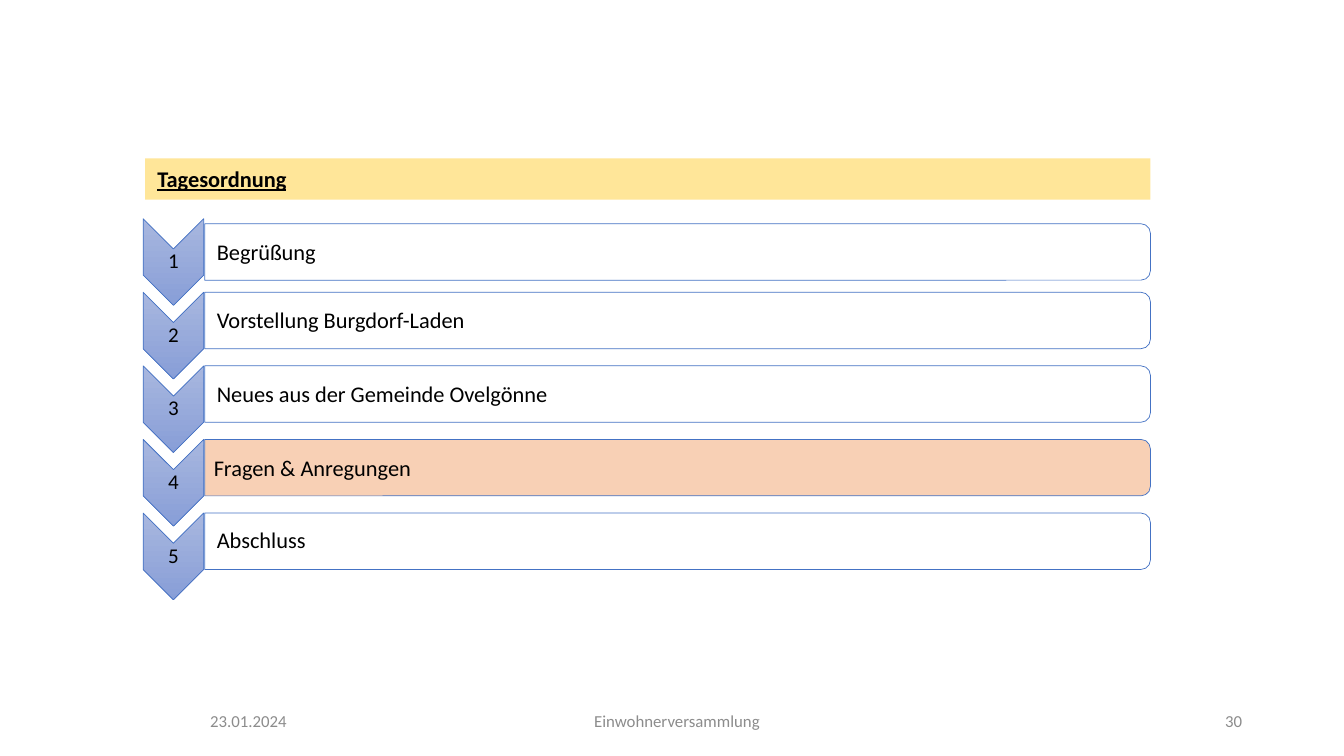
import pptx
import pptx.dml.color
import pptx.enum.shapes
import pptx.enum.text
import pptx.oxml
import pptx.oxml.ns
import pptx.util
from pptx.util import Inches

RGBColor = pptx.dml.color.RGBColor
SHAPES = pptx.enum.shapes.MSO_SHAPE
ALIGN = pptx.enum.text.PP_ALIGN

BLACK = RGBColor(0x00, 0x00, 0x00)
WHITE = RGBColor(0xFF, 0xFF, 0xFF)
GREY = RGBColor(0x8C, 0x8C, 0x8C)
BLUE = RGBColor(0x44, 0x72, 0xC4)
LIGHT_BLUE = RGBColor(0xA8, 0xB7, 0xDF)
MID_BLUE = RGBColor(0x88, 0x9E, 0xD7)
YELLOW = RGBColor(0xFF, 0xE6, 0x99)
PEACH = RGBColor(0xF8, 0xCB, 0xAD)

# Wording, bar colour, text indent, line spacing
AGENDA = [
    ("Begrüßung", WHITE, 0.12, 1.0),
    ("Vorstellung Burgdorf-Laden", WHITE, 0.12, 1.0),
    ("Neues aus der Gemeinde Ovelgönne", WHITE, 0.12, 1.0),
    ("Fragen & Anregungen", PEACH, 0.09, 1.0),
    ("Abschluss", WHITE, 0.12, 0.9),
]
ROW_PITCH = 0.73
CHEVRON_LENGTH, CHEVRON_WIDTH = 0.86, 0.6
BAR_HEIGHT = 0.56


def write_text(holder, text, size=16, color=BLACK, align=ALIGN.LEFT, indent=0.01,
               spacing=1.0, bold=False, underline=False):
    frame = holder.text_frame
    frame.word_wrap = True
    frame.auto_size = pptx.enum.text.MSO_AUTO_SIZE.NONE
    frame.vertical_anchor = pptx.enum.text.MSO_ANCHOR.MIDDLE
    frame.margin_left = Inches(indent)
    frame.margin_right = frame.margin_top = frame.margin_bottom = Inches(0.01)
    paragraph = frame.paragraphs[0]
    paragraph.alignment = align
    paragraph.line_spacing = spacing
    run = paragraph.add_run()
    run.text = text
    run.font.name = "Calibri"
    run.font.size = pptx.util.Pt(size)
    run.font.color.rgb = color
    run.font.bold = bold
    run.font.underline = underline


def add_label(slide, left, top, width, height, text, **text_format):
    label = slide.shapes.add_textbox(*map(Inches, (left, top, width, height)))
    write_text(label, text, **text_format)


def add_turned_shape(slide, kind, left, top, width, height):
    """Add a shape turned by 90 degrees that fills the given visible box."""
    shape = slide.shapes.add_shape(
        kind, Inches(left + (width - height) / 2), Inches(top + (height - width) / 2),
        Inches(height), Inches(width))
    shape.rotation = 90
    shape.shadow.inherit = False
    shape.line.color.rgb = BLUE
    shape.line.width = pptx.util.Pt(0.5)
    return shape


def add_chevron(slide, left, top, number):
    chevron = add_turned_shape(slide, SHAPES.CHEVRON, left, top,
                               CHEVRON_WIDTH, CHEVRON_LENGTH)
    chevron.fill.gradient()
    chevron.fill.gradient_angle = 270
    for stop, color in zip(chevron.fill.gradient_stops, (LIGHT_BLUE, MID_BLUE)):
        stop.color.rgb = color
    # Keep the shading vertical although the shape is turned
    gradient = chevron.element.spPr.find(pptx.oxml.ns.qn("a:gradFill"))
    gradient.set("rotWithShape", "0")
    add_label(slide, left, top + 0.3, CHEVRON_WIDTH, 0.26, str(number),
              size=15, align=ALIGN.CENTER, spacing=0.9)


def add_bar(slide, left, top, width, text, color, indent, spacing):
    bar = add_turned_shape(slide, SHAPES.ROUND_2_SAME_RECTANGLE, left, top,
                           width, BAR_HEIGHT)
    bar.fill.solid()
    bar.fill.fore_color.rgb = color
    fill_color = bar.element.spPr.find(
        pptx.oxml.ns.qn("a:solidFill")).find(pptx.oxml.ns.qn("a:srgbClr"))
    alpha = pptx.oxml.parse_xml(
        f'<a:alpha {pptx.oxml.ns.nsdecls("a")} val="90000"/>')
    fill_color.append(alpha)
    add_label(slide, left, top + 0.02, width - 0.03, 0.51, text,
              indent=indent, spacing=spacing)


def add_agenda(slide, left, top, width):
    for index, (text, color, indent, spacing) in enumerate(AGENDA):
        row_top = top + index * ROW_PITCH
        add_chevron(slide, left, row_top, index + 1)
        # The first bar sits slightly lower than its chevron
        bar_top = row_top + (0.05 if index == 0 else 0)
        add_bar(slide, left + CHEVRON_WIDTH + 0.01, bar_top,
                width - CHEVRON_WIDTH - 0.01, text, color, indent, spacing)


def add_title(slide, left, top, width, height):
    title = slide.shapes.title
    title.left, title.top, title.width, title.height = map(
        Inches, (left, top, width, height))
    title.fill.solid()
    title.fill.fore_color.rgb = YELLOW
    write_text(title, "Tagesordnung", indent=0.12, bold=True, underline=True)


def add_footer(slide, left, top, width, height):
    side_width, gap = 3, 0.1
    footer_format = {"size": 12, "color": GREY, "indent": 0.1}
    add_label(slide, left, top, side_width, height, "23.01.2024",
              align=ALIGN.CENTER, **footer_format)
    add_label(slide, left + side_width + gap, top, width - 2 * (side_width + gap),
              height, "Einwohnerversammlung", align=ALIGN.CENTER, **footer_format)
    add_label(slide, left + width - side_width, top, side_width - 0.09, height, "30",
              align=ALIGN.RIGHT, **footer_format)


def main():
    presentation = pptx.Presentation()
    presentation.slide_width = Inches(13.33)
    presentation.slide_height = Inches(7.5)
    slide = presentation.slides.add_slide(presentation.slide_layouts[5])
    add_title(slide, 1.44, 1.57, 9.97, 0.41)
    add_agenda(slide, 1.42, 2.17, 9.99)
    add_footer(slide, 0.92, 6.95, 11.5, 0.4)
    presentation.save("out.pptx")


if __name__ == "__main__":
    main()
